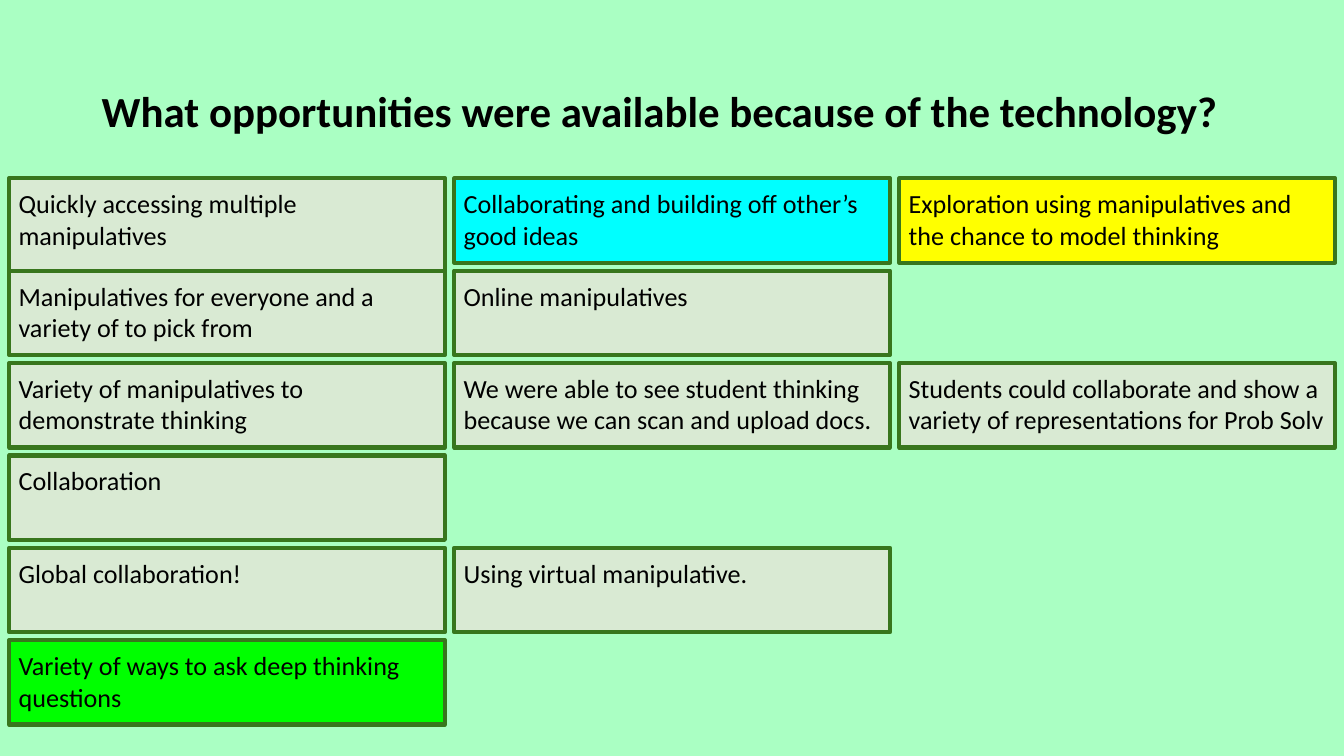
import pptx
import pptx.util
import pptx.dml.color
import pptx.enum.shapes
import pptx.enum.text

Pt = pptx.util.Pt
RGBColor = pptx.dml.color.RGBColor
ANCHOR = pptx.enum.text.MSO_ANCHOR
ALIGN = pptx.enum.text.PP_ALIGN

MINT = RGBColor(0xAA, 0xFF, 0xC3)
SAGE = RGBColor(0xD9, 0xEA, 0xD3)
CYAN = RGBColor(0x00, 0xFF, 0xFF)
YELLOW = RGBColor(0xFF, 0xFF, 0x00)
LIME = RGBColor(0x00, 0xFF, 0x00)
DARK_GREEN = RGBColor(0x38, 0x76, 0x1D)
BLACK = RGBColor(0x00, 0x00, 0x00)


def write_text(frame, text, size=14, bold=False, anchor=ANCHOR.TOP,
               side_inset=5, end_inset=5, line_spacing=1.0):
    frame.word_wrap = True
    frame.auto_size = pptx.enum.text.MSO_AUTO_SIZE.NONE
    frame.vertical_anchor = anchor
    frame.margin_left = frame.margin_right = Pt(side_inset)
    frame.margin_top = frame.margin_bottom = Pt(end_inset)
    paragraph = frame.paragraphs[0]
    paragraph.alignment = ALIGN.LEFT
    paragraph.line_spacing = line_spacing
    run = paragraph.add_run()
    run.text = text
    run.font.name = "Calibri"
    run.font.size = Pt(size)
    run.font.bold = bold
    run.font.color.rgb = BLACK


# Slide and background
deck = pptx.Presentation()
deck.slide_width, deck.slide_height = Pt(720), Pt(405)
slide = deck.slides.add_slide(deck.slide_layouts[5])
slide.background.fill.solid()
slide.background.fill.fore_color.rgb = MINT

# Question
question = slide.shapes.title
question.left, question.top = Pt(49.5), Pt(21.6)
question.width, question.height = Pt(621), Pt(78.3)
write_text(question.text_frame,
           "What opportunities were available because of the technology?",
           size=23, bold=True, anchor=ANCHOR.MIDDLE, end_inset=2.7, line_spacing=0.9)

# Answers on a grid of three columns: (text, fill, height)
LEFT, TOP = 5, 95.5
COLUMN_STEP, ROW_STEP = 238.4, 49.5
WIDTH, HEIGHT, TALL = 233.4, 45.2, 59.5
answer_rows = [
    [("Quickly accessing multiple manipulatives", SAGE, TALL),
     ("Collaborating and building off other’s good ideas", CYAN, HEIGHT),
     ("Exploration using manipulatives and the chance to model thinking", YELLOW, HEIGHT)],
    [("Manipulatives for everyone and a variety of to pick from", SAGE, HEIGHT),
     ("Online manipulatives", SAGE, HEIGHT)],
    [("Variety of manipulatives to demonstrate thinking", SAGE, HEIGHT),
     ("We were able to see student thinking because we can scan and upload docs.", SAGE, HEIGHT),
     ("Students could collaborate and show a variety of representations for Prob Solv",
      SAGE, HEIGHT)],
    [("Collaboration", SAGE, HEIGHT)],
    [("Global collaboration!", SAGE, HEIGHT),
     ("Using virtual manipulative.", SAGE, HEIGHT)],
    [("Variety of ways to ask deep thinking questions", LIME, HEIGHT)],
]
for row, answers in enumerate(answer_rows):
    for column, (text, color, height) in enumerate(answers):
        answer = slide.shapes.add_shape(
            pptx.enum.shapes.MSO_SHAPE.RECTANGLE,
            Pt(LEFT + column * COLUMN_STEP), Pt(TOP + row * ROW_STEP),
            Pt(WIDTH), Pt(height))
        answer.shadow.inherit = False
        answer.fill.solid()
        answer.fill.fore_color.rgb = color
        answer.line.color.rgb = DARK_GREEN
        answer.line.width = Pt(2.25)
        write_text(answer.text_frame, text)

deck.save("out.pptx")
